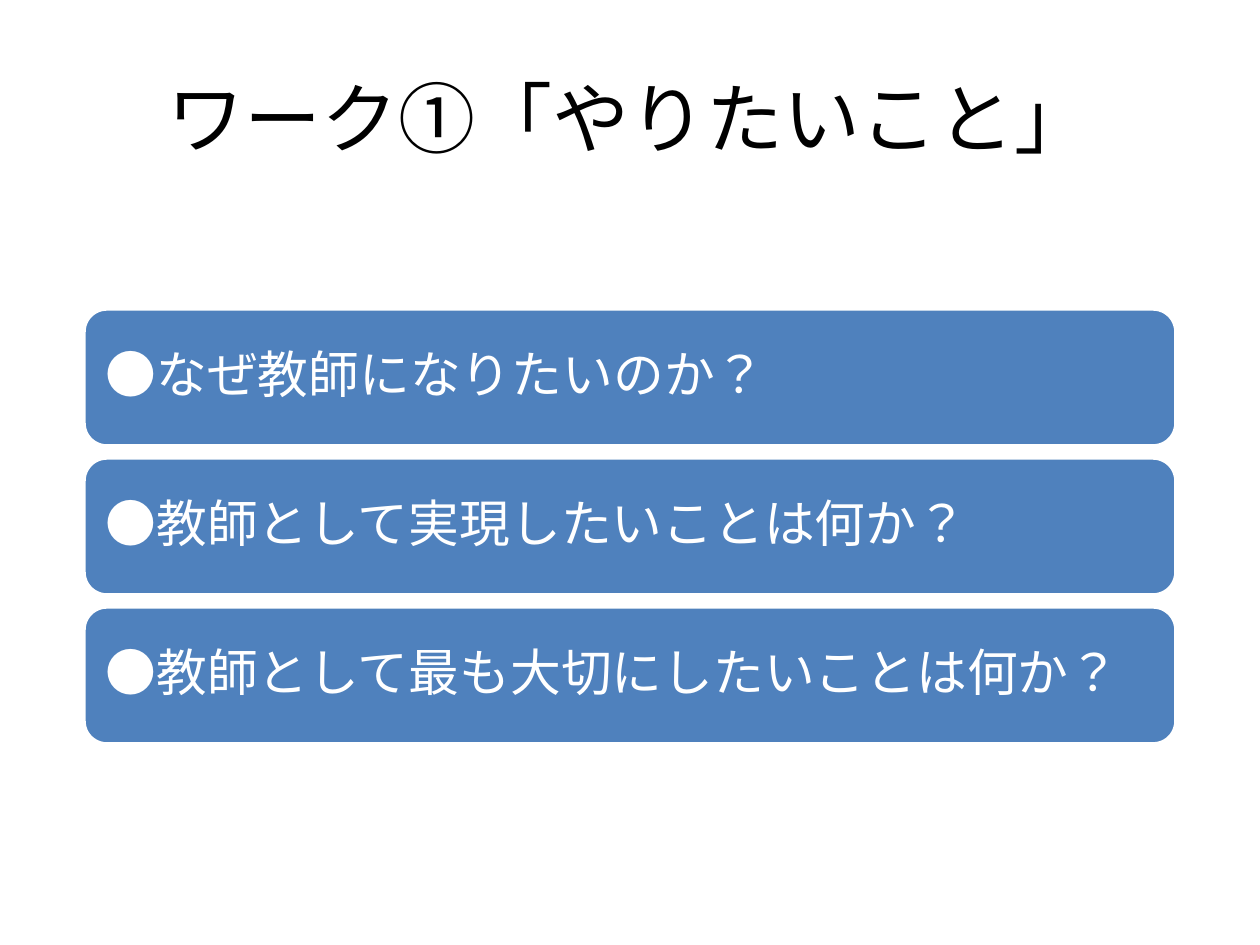
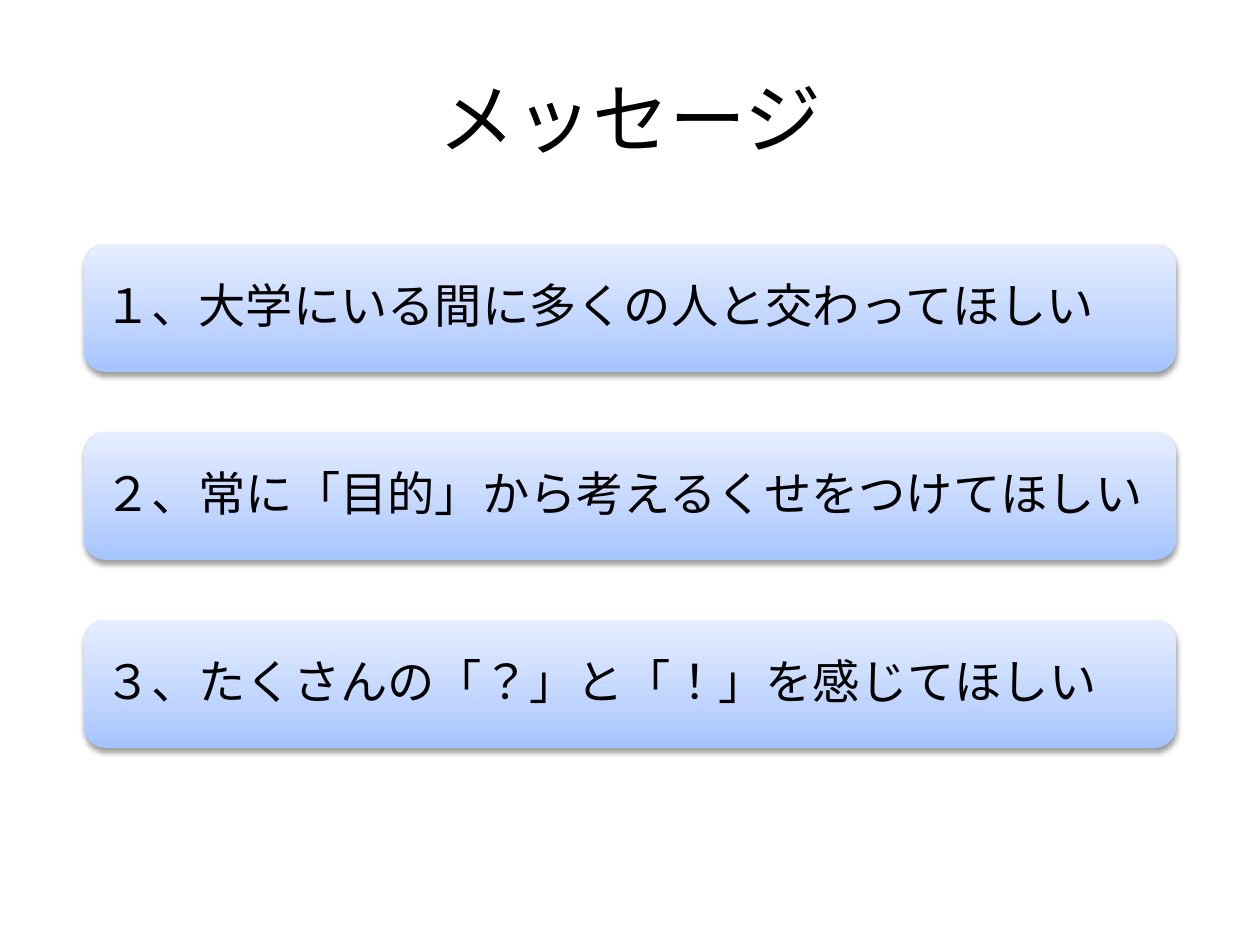
from dataclasses import dataclass

from lxml.etree import SubElement
from pptx import Presentation
from pptx.dml.color import RGBColor
from pptx.enum.lang import MSO_LANGUAGE_ID as Language
from pptx.enum.shapes import MSO_SHAPE as Preset
from pptx.enum.text import MSO_ANCHOR as Anchor, PP_ALIGN as Align
from pptx.oxml.ns import qn
from pptx.util import Pt

EMU_PER_PX = 914400 / 126


@dataclass(frozen=True)
class Theme:
    """Colours and type sizes that the slides share."""
    font: str = "Cabin"
    ink: str = "000000"
    paper: str = "FFFFFF"
    question_blue: str = "4F81BD"
    message_blues: tuple = ((0, "A4C4FF"), (35, "BFD4FF"), (100, "E6EEFF"))
    title_size: int = 44
    question_size: int = 29
    message_size: int = 27


THEME = Theme()
TITLE_BOX = (63, 38, 1134, 158)
BAND_LEFT, BAND_WIDTH = 84, 1092

QUESTIONS = (
    "●なぜ教師になりたいのか？",
    "●教師として実現したいことは何か？",
    "●教師として最も大切にしたいことは何か？",
)
MESSAGES = (
    "１、大学にいる間に多くの人と交わってほしい",
    "２、常に「目的」から考えるくせをつけてほしい",
    "３、たくさんの「？」と「！」を感じてほしい",
)


def px(length):
    """Turn pixels into EMU."""
    return round(length * EMU_PER_PX)


def rgb(colour):
    """Turn a hex string into a colour."""
    return RGBColor.from_string(colour)


def write(frame, words, size, colour, align):
    """Write one vertically centred line of text into a frame."""
    frame.word_wrap = True
    frame.vertical_anchor = Anchor.MIDDLE
    line = frame.paragraphs[0]
    line.alignment = align
    run = line.add_run()
    run.text = words
    run.font.name = THEME.font
    run.font.size = Pt(size)
    run.font.color.rgb = rgb(colour)
    run.font.language_id = Language.JAPANESE
    return line


def add_titled_slide(deck, words):
    """Add a slide with a centred title."""
    slide = deck.slides.add_slide(deck.slide_layouts[5])
    title = slide.shapes.title
    title.left, title.top, title.width, title.height = map(px, TITLE_BOX)
    write(title.text_frame, words, THEME.title_size, THEME.ink, Align.CENTER)
    return slide


def style_question(band):
    """Give a band a flat blue fill and a white outline."""
    band.fill.solid()
    band.fill.fore_color.rgb = rgb(THEME.question_blue)
    band.line.color.rgb = rgb(THEME.paper)
    band.line.width = Pt(2)


def style_message(band):
    """Give a band a pale blue gradient and a soft shadow below."""
    band.line.fill.background()
    band.fill.gradient()
    band.fill.gradient_angle = 90
    properties = band._element.spPr
    stops = properties.find(".//" + qn("a:gsLst"))
    stops.clear()
    for percent, colour in THEME.message_blues:
        stop = SubElement(stops, qn("a:gs"), pos=str(percent * 1000))
        SubElement(stop, qn("a:srgbClr"), val=colour)
    shadow = SubElement(properties.find(qn("a:effectLst")), qn("a:outerShdw"),
                        blurRad=str(Pt(3.1)), dist=str(Pt(1.6)),
                        dir="5400000", rotWithShape="0")
    tint = SubElement(shadow, qn("a:srgbClr"), val=THEME.ink)
    SubElement(tint, qn("a:alpha"), val="38000")


def add_bands(slide, lines, top, height, step, inset, size, colour, style):
    """Stack one rounded band per line at an equal step."""
    for index, words in enumerate(lines):
        band = slide.shapes.add_shape(
            Preset.ROUNDED_RECTANGLE, px(BAND_LEFT), px(top + index * step),
            px(BAND_WIDTH), px(height))
        band.shadow.inherit = False
        style(band)
        frame = band.text_frame
        frame.margin_left = frame.margin_right = px(inset)
        frame.margin_top = frame.margin_bottom = px(inset)
        write(frame, words, size, colour, Align.LEFT).line_spacing = 0.9


def main():
    """Build and save both slides."""
    deck = Presentation()
    deck.slide_width, deck.slide_height = px(1260), px(945)
    work = add_titled_slide(deck, "ワーク①「やりたいこと」")
    add_bands(work, QUESTIONS, top=309, height=137, step=149, inset=15,
              size=THEME.question_size, colour=THEME.paper, style=style_question)
    closing = add_titled_slide(deck, "メッセージ")
    add_bands(closing, MESSAGES, top=244, height=128, step=188, inset=14,
              size=THEME.message_size, colour=THEME.ink, style=style_message)
    deck.save("out.pptx")


if __name__ == "__main__":
    main()
